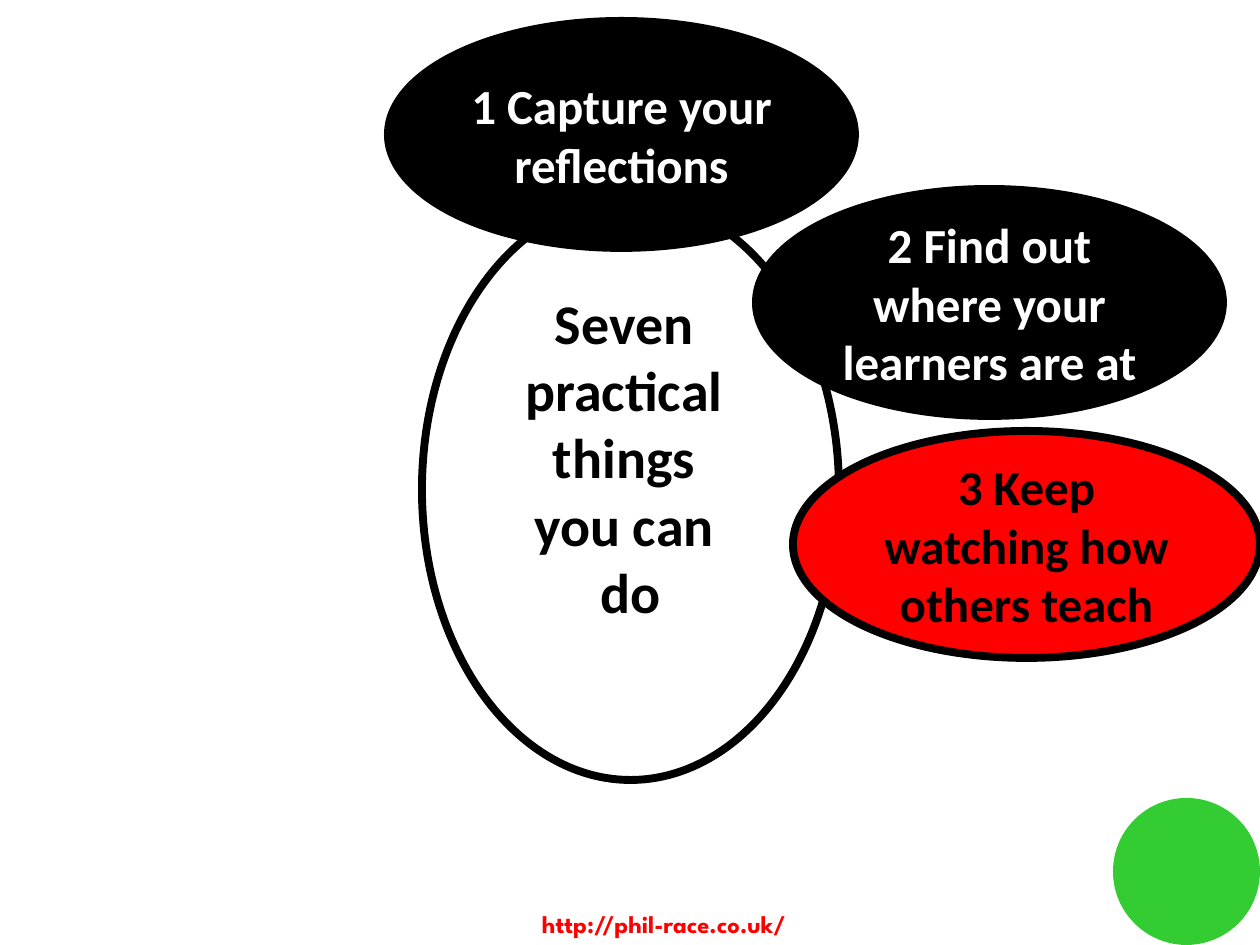
from dataclasses import dataclass

from pptx import Presentation
from pptx import util as u
from pptx.dml.color import RGBColor
from pptx.enum import shapes, text

PX = u.Inches(1) // 126


@dataclass(frozen=True)
class Theme:
    black: str = "000000"
    white: str = "FFFFFF"
    red: str = "FF0000"
    green: str = "33CC33"
    font: str = "Calibri"
    link_font: str = "League Spartan"
    hub_size: int = 32
    step_size: int = 28
    link_size: int = 14
    outline: float = 4.5


T = Theme()

# text, left, top, fill, text colour
STEPS = [
    ("2 Find out where your learners are at", 756, 189, T.black, T.white),
    ("1 Capture your reflections", 388, 21, T.black, T.white),
    ("3 Keep watching how others teach", 793, 431, T.red, T.black),
]
STEP_BOX = (467, 227)
HUB = ["Seven ", "practical ", "things ", "you can ", "do"]
HUB_BOX = (422, 199, 417, 581)
HUB_INSETS = (13, 6, 13, 72)  # the deep bottom inset lifts the words
LINK = "http://phil-race.co.uk/"
LINK_BOX = (482, 902, 364, 43)
CORNER_BOX = (1113, 798, 147, 147)


def rgb(color):
    return RGBColor.from_string(color)


def px(values):
    return [v * PX for v in values]


def write(s, lines, font, size, color, insets):
    tf = s.text_frame
    tf.word_wrap = True
    tf.vertical_anchor = text.MSO_ANCHOR.MIDDLE
    tf.margin_left, tf.margin_top, tf.margin_right, tf.margin_bottom = px(insets)
    tf.text = "\n".join(lines)
    for p in tf.paragraphs:
        p.alignment = text.PP_ALIGN.CENTER
        for r in p.runs:
            r.font.name, r.font.size, r.font.bold = font, u.Pt(size), True
            r.font.color.rgb = rgb(color)


def add_ellipse(slide, box, fill=None, outlined=True):
    s = slide.shapes.add_shape(shapes.MSO_SHAPE.OVAL, *px(box))
    s.shadow.inherit = False
    if fill is None:
        s.fill.background()
    else:
        s.fill.solid()
        s.fill.fore_color.rgb = rgb(fill)
    if outlined:
        s.line.color.rgb = rgb(T.black)
        s.line.width = u.Pt(T.outline)
    else:
        s.line.fill.background()
    return s


def add_step(slide, words, left, top, fill, color):
    s = add_ellipse(slide, (left, top, *STEP_BOX), fill)
    write(s, [words], T.font, T.step_size, color, (0, 0, 0, 0))


def main():
    prs = Presentation()
    prs.slide_width, prs.slide_height = u.Inches(10), u.Inches(7.5)
    slide = prs.slides.add_slide(prs.slide_layouts[6])

    add_ellipse(slide, CORNER_BOX, T.green, outlined=False)
    link = slide.shapes.add_textbox(*px(LINK_BOX))
    write(link, [LINK], T.link_font, T.link_size, T.red, (13, 6, 13, 6))

    *behind, front = STEPS
    for step in behind:
        add_step(slide, *step)
    hub = add_ellipse(slide, HUB_BOX)
    write(hub, HUB, T.font, T.hub_size, T.black, HUB_INSETS)
    add_step(slide, *front)

    prs.save("out.pptx")


if __name__ == "__main__":
    main()
